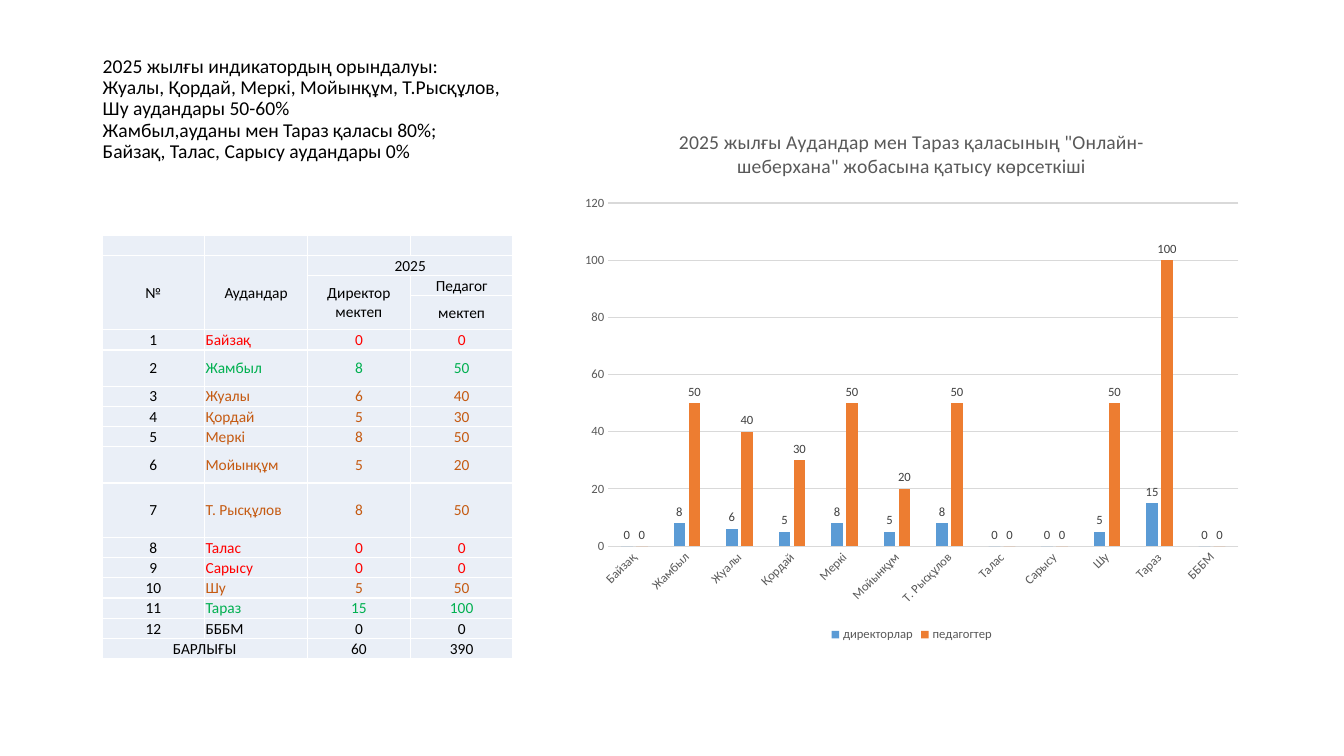
import pptx
import pptx.util
import pptx.chart.data
import pptx.dml.color
import pptx.enum.chart
import pptx.enum.text
import pptx.oxml

Cm = pptx.util.Cm
Pt = pptx.util.Pt
RGBColor = pptx.dml.color.RGBColor
ALIGN = pptx.enum.text.PP_ALIGN

BLACK = RGBColor(0x00, 0x00, 0x00)
RED = RGBColor(0xFF, 0x00, 0x00)
GREEN = RGBColor(0x00, 0xB0, 0x50)
BROWN = RGBColor(0xC5, 0x5A, 0x11)
PALE = RGBColor(0xEA, 0xEF, 0xF7)
BLUE = RGBColor(0x5B, 0x9B, 0xD5)
ORANGE = RGBColor(0xED, 0x7D, 0x31)
GREY = RGBColor(0x59, 0x59, 0x59)
DARK = RGBColor(0x40, 0x40, 0x40)
LIGHT = RGBColor(0xD9, 0xD9, 0xD9)
NS = 'xmlns:a="http://schemas.openxmlformats.org/drawingml/2006/main"'

summary = [
    "2025 жылғы индикатордың орындалуы:",
    "Жуалы, Қордай, Меркі, Мойынқұм, Т.Рысқұлов, Шу аудандары 50-60%",
    "Жамбыл,ауданы мен Тараз қаласы 80%;",
    "Байзақ, Талас, Сарысу аудандары 0%",
]
districts = [
    ("Байзақ", 0, 0, RED),
    ("Жамбыл", 8, 50, GREEN),
    ("Жуалы", 6, 40, BROWN),
    ("Қордай", 5, 30, BROWN),
    ("Меркі", 8, 50, BROWN),
    ("Мойынқұм", 5, 20, BROWN),
    ("Т. Рысқұлов", 8, 50, BROWN),
    ("Талас", 0, 0, RED),
    ("Сарысу", 0, 0, RED),
    ("Шу", 5, 50, BROWN),
    ("Тараз", 15, 100, GREEN),
    ("БББМ", 0, 0, BLACK),
]
names, directors, teachers, colours = zip(*districts)


def style(font, size, colour):
    font.name = "Calibri"
    font.size = Pt(size)
    font.bold = False
    font.color.rgb = colour


deck = pptx.Presentation()
deck.slide_width = Cm(33.87)
deck.slide_height = Cm(19.05)
slide = deck.slides.add_slide(deck.slide_layouts[6])

heading = slide.shapes.add_textbox(Cm(2.34), Cm(1.3), Cm(10.92), Cm(4.62)).text_frame
heading.word_wrap = True
for number, line in enumerate(summary):
    paragraph = heading.add_paragraph() if number else heading.paragraphs[0]
    paragraph.line_spacing = 0.9
    run = paragraph.add_run()
    run.text = line
    style(run.font, 14, BLACK)

rows = [
    ["", "", "", ""],
    ["№", "Аудандар", "2025", ""],
    ["", "", "Директор мектеп", "Педагог"],
    ["", "", "", "мектеп"],
]
for number, (name, director, teacher, colour) in enumerate(districts, 1):
    rows.append([str(number), name, str(director), str(teacher)])
rows.append(["БАРЛЫҒЫ", "", str(sum(directors)), str(sum(teachers))])
row_colours = [BLACK] * 4 + list(colours) + [BLACK]
tall_rows = {3: 0.86, 5: 0.91, 9: 0.91, 10: 1.37}
row_heights = [tall_rows.get(r, 0.51) for r in range(len(rows))]

table = slide.shapes.add_table(
    len(rows), 4, Cm(2.57), Cm(5.92), Cm(10.36), Cm(sum(row_heights))
).table
for column in table.columns:
    column.width = Cm(2.59)
for r, texts in enumerate(rows):
    table.rows[r].height = Cm(row_heights[r])
    for c, text in enumerate(texts):
        cell = table.cell(r, c)
        cell.margin_left = cell.margin_right = cell.margin_top = Cm(0.02)
        cell.margin_bottom = 0
        cell.vertical_anchor = pptx.enum.text.MSO_ANCHOR.MIDDLE
        properties = cell._tc.get_or_add_tcPr()
        for side in "LRTB":
            properties.append(pptx.oxml.parse_xml(
                f'<a:ln{side} {NS} w="12700"><a:solidFill><a:srgbClr val="FFFFFF"/>'
                f'</a:solidFill></a:ln{side}>'))
        cell.fill.solid()
        cell.fill.fore_color.rgb = PALE
        paragraph = cell.text_frame.paragraphs[0]
        is_name = c == 1 and 4 <= r < len(rows) - 1
        paragraph.alignment = ALIGN.LEFT if is_name else ALIGN.CENTER
        if text:
            run = paragraph.add_run()
            run.text = text
            style(run.font, 11, row_colours[r] if c else BLACK)
        else:
            paragraph._p.append(pptx.oxml.parse_xml(f'<a:endParaRPr {NS} sz="1100"/>'))
last = len(rows) - 1
for top, left, bottom, right in [(1, 0, 3, 0), (1, 1, 3, 1), (1, 2, 1, 3),
                                 (2, 2, 3, 2), (last, 0, last, 1)]:
    table.cell(top, left).merge(table.cell(bottom, right))

participation = pptx.chart.data.CategoryChartData()
participation.categories = names
participation.add_series("директорлар", directors)
participation.add_series("педагогтер", teachers)
chart = slide.shapes.add_chart(
    pptx.enum.chart.XL_CHART_TYPE.COLUMN_CLUSTERED,
    Cm(14.4), Cm(2.74), Cm(17.15), Cm(13.54), participation,
).chart
style(chart.font, 10, BLACK)

chart.has_title = True
run = chart.chart_title.text_frame.paragraphs[0].add_run()
run.text = '2025 жылғы Аудандар мен Тараз қаласының "Онлайн-шеберхана" жобасына қатысу көрсеткіші'
style(run.font, 14, GREY)
chart.chart_title.include_in_layout = False

chart.has_legend = True
chart.legend.position = pptx.enum.chart.XL_LEGEND_POSITION.BOTTOM
chart.legend.include_in_layout = False
style(chart.legend.font, 9, GREY)

for axis in (chart.category_axis, chart.value_axis):
    axis.major_tick_mark = axis.minor_tick_mark = pptx.enum.chart.XL_TICK_MARK.NONE
    style(axis.tick_labels.font, 9, GREY)
chart.category_axis.format.line.color.rgb = LIGHT
chart.category_axis.format.line.width = Pt(0.75)
chart.category_axis._element.txPr.bodyPr.set("rot", "-2700000")
chart.value_axis.format.line.fill.background()
chart.value_axis.minimum_scale = 0
chart.value_axis.maximum_scale = 120
chart.value_axis.major_unit = 20
chart.value_axis.major_gridlines.format.line.color.rgb = LIGHT
chart.value_axis.major_gridlines.format.line.width = Pt(0.75)

columns = chart.plots[0]
columns.gap_width = 219
columns.overlap = -27
columns.vary_by_categories = False
for series, colour in zip(columns.series, (BLUE, ORANGE)):
    series.format.fill.solid()
    series.format.fill.fore_color.rgb = colour
    series.data_labels.show_value = True
    series.data_labels.position = pptx.enum.chart.XL_LABEL_POSITION.OUTSIDE_END
    style(series.data_labels.font, 9, DARK)

deck.save("out.pptx")
